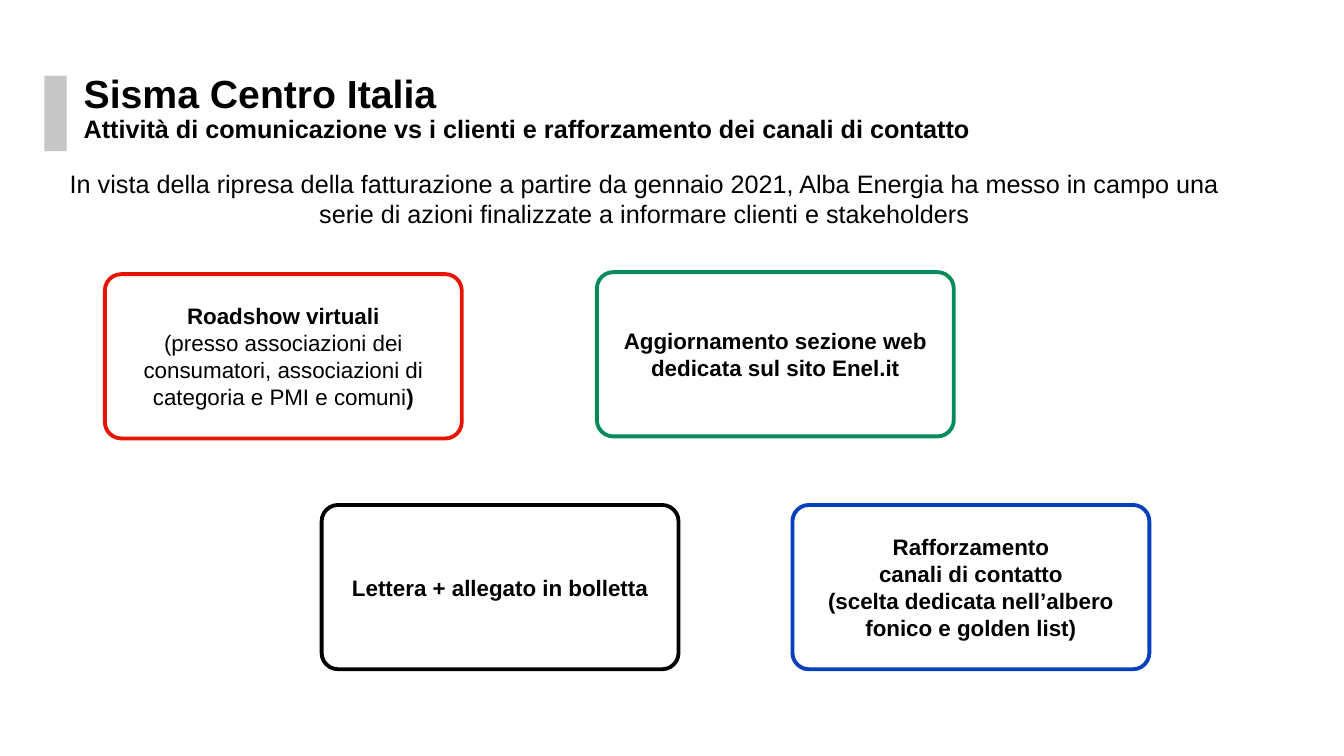
from pptx import Presentation
from pptx.dml.color import RGBColor
from pptx.enum.shapes import MSO_SHAPE
from pptx.enum.text import MSO_ANCHOR, MSO_AUTO_SIZE, PP_ALIGN
from pptx.oxml.ns import qn
from pptx.util import Inches, Pt

RECT, ROUND = MSO_SHAPE.RECTANGLE, MSO_SHAPE.ROUNDED_RECTANGLE
TOP, MIDDLE = MSO_ANCHOR.TOP, MSO_ANCHOR.MIDDLE
LEFT, CENTER = PP_ALIGN.LEFT, PP_ALIGN.CENTER
FIXED = MSO_AUTO_SIZE.NONE


def color(code):
    return RGBColor.from_string(code)


def style(run, size, bold):
    run.font.name = "Arial"
    run.font.size = Pt(size)
    run.font.bold = bold
    run.font.color.rgb = color("000000")


deck = Presentation()
deck.slide_width, deck.slide_height = Inches(13.33), Inches(7.5)
slide = deck.slides.add_slide(deck.slide_layouts[1])
shapes = slide.shapes

# Grey bar beside the title
bar = shapes.add_shape(RECT, Inches(0.44), Inches(0.75), Inches(0.22), Inches(0.75))
bar.shadow.inherit = False
bar.fill.solid()
bar.fill.fore_color.rgb = color("C6C6C6")
bar.line.fill.background()

# Title and lead sentence
title, body = shapes.title, slide.placeholders[1]
title.text_frame.text = (
    "Sisma Centro Italia\v"
    "Attività di comunicazione vs i clienti e rafforzamento dei canali di contatto"
)
body.text_frame.text = (
    "In vista della ripresa della fatturazione a partire da gennaio 2021, "
    "Alba Energia ha messo in campo una serie di azioni finalizzate "
    "a informare clienti e stakeholders"
)
for holder, x, y, width, height, right, align, spacing, sizes, bold in [
    (title, 0.83, 0.74, 11.81, 0.43, 0, LEFT, 0.9, (28, 18), True),
    (body, 0.66, 1.67, 11.66, 0.73, 0.2, CENTER, 1, (18,), False),
]:
    holder.left, holder.top = Inches(x), Inches(y)
    holder.width, holder.height = Inches(width), Inches(height)
    frame = holder.text_frame
    frame.word_wrap = True
    frame.auto_size = FIXED
    frame.vertical_anchor = TOP
    frame.margin_left = frame.margin_top = frame.margin_bottom = 0
    frame.margin_right = Inches(right)
    para = frame.paragraphs[0]
    para.alignment = align
    para.line_spacing = spacing
    para.space_before = Pt(0)
    for run, size in zip(para.runs, sizes):
        style(run, size, bold)

props = body.text_frame.paragraphs[0]._p.get_or_add_pPr()
props.set("marL", "0")
props.set("indent", "0")
props.append(props.makeelement(qn("a:buNone"), {}))

# Action cards: each paragraph is a list of (text, bold) runs
cards = [
    (3.19, 5.01, "000000", [[("Lettera + allegato in bolletta", True)]]),
    (1.04, 2.72, "E71401", [
        [("Roadshow virtuali", True)],
        [("(presso associazioni dei consumatori, associazioni di categoria "
          "e PMI e comuni", False), (")", True)],
    ]),
    (5.92, 2.7, "028C59", [
        [("Aggiornamento sezione web dedicata sul sito Enel.it", True)],
    ]),
    (7.86, 5.01, "043FBC", [
        [("Rafforzamento", True)],
        [("canali di contatto", True)],
        [("(scelta dedicata nell’albero fonico e golden list)", True)],
    ]),
]
for x, y, edge, lines in cards:
    card = shapes.add_shape(ROUND, Inches(x), Inches(y), Inches(3.54), Inches(1.63))
    card.adjustments[0] = 0.1
    card.shadow.inherit = False
    card.fill.background()
    card.line.color.rgb = color(edge)
    card.line.width = Pt(2.75)
    frame = card.text_frame
    frame.word_wrap = True
    frame.vertical_anchor = MIDDLE
    frame.margin_left = frame.margin_right = 0
    frame.margin_top = frame.margin_bottom = Inches(0.04)
    for i, parts in enumerate(lines):
        para = frame.add_paragraph() if i else frame.paragraphs[0]
        para.alignment = CENTER
        for text, bold in parts:
            run = para.add_run()
            run.text = text
            style(run, 16, bold)

deck.save("out.pptx")
